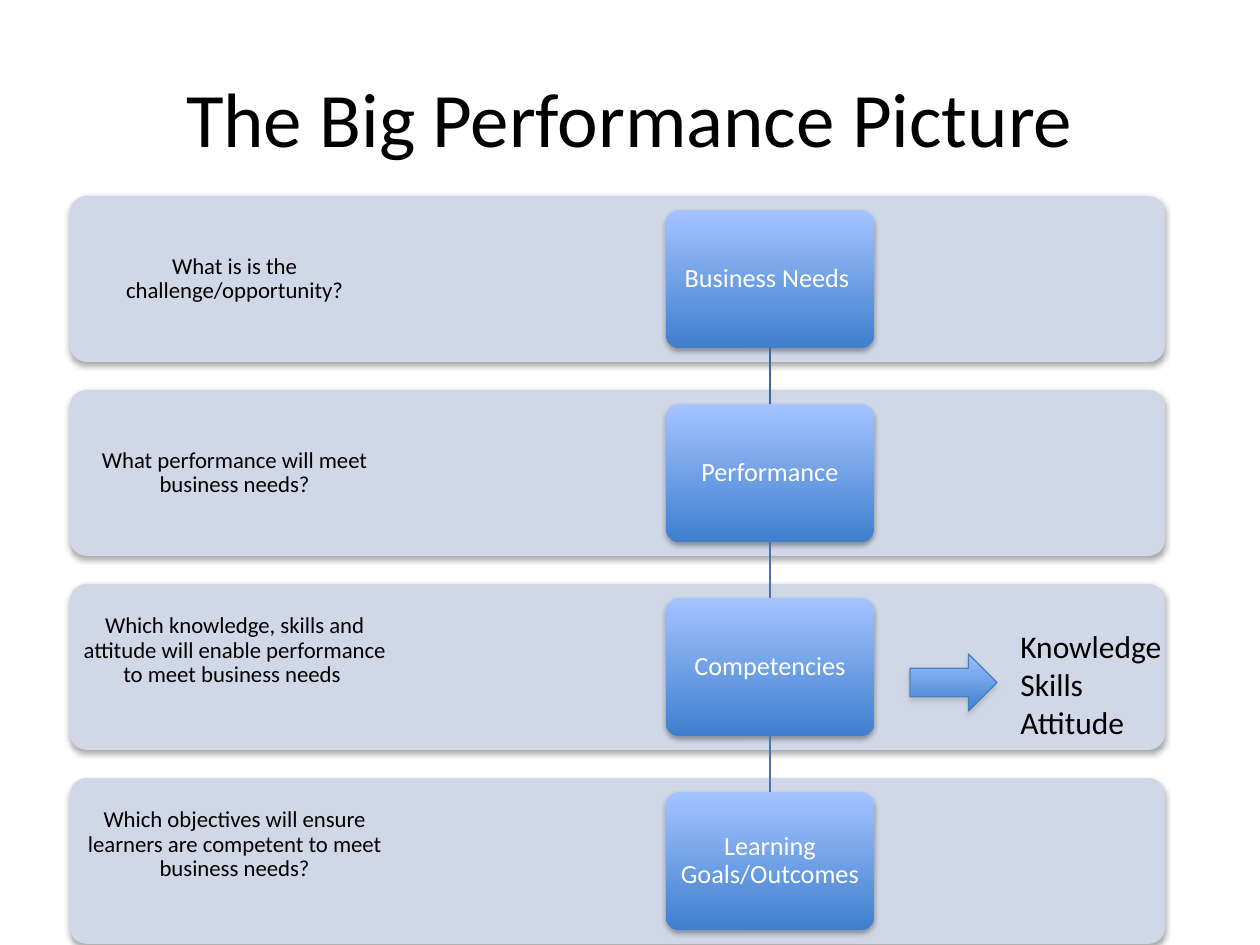
import pptx
import pptx.util
import pptx.dml.color
import pptx.enum.shapes
import pptx.enum.text
import pptx.oxml
import pptx.oxml.ns

TITLE = "The Big Performance Picture"
ROWS = [
    ("What is is the challenge/opportunity?", "Business Needs ", 13),
    ("What performance will meet business needs?", "Performance", 13),
    ("Which knowledge, skills and attitude will enable performance "
     "to meet business needs ", "Competencies", 45),
    ("Which objectives will ensure learners are competent to meet "
     "business needs?", "Learning Goals/Outcomes", 45),
]
LINKS = ["3F6797", "4875AC", "4875AC"]
TRAITS = ["Knowledge", "Skills", "Attitude"]

FONT = "Calibri"
SCALE = 914400 / 126
TOP, STEP = 196, 194
BAND_X, BAND_W, BAND_H = 70, 1095, 166
ASK_W = 329
BOX_X, BOX_W, BOX_H = 666, 208, 138
BOX_PAD = 4

KIND = pptx.enum.shapes.MSO_SHAPE
ALIGN = pptx.enum.text.PP_ALIGN
MIDDLE = pptx.enum.text.MSO_ANCHOR.MIDDLE


def px(n):
    return pptx.util.Emu(round(n * SCALE))


def tint(code):
    return pptx.dml.color.RGBColor.from_string(code)


def shade(shape, code):
    xml = (f'<a:effectLst {pptx.oxml.ns.nsdecls("a")}>'
           '<a:outerShdw blurRad="39370" dist="22860" dir="5400000" rotWithShape="0">'
           f'<a:srgbClr val="{code}"><a:alpha val="35000"/></a:srgbClr>'
           '</a:outerShdw></a:effectLst>')
    shape.shadow.inherit = False
    props = shape._element.spPr
    old = props.find(pptx.oxml.ns.qn("a:effectLst"))
    props.replace(old, pptx.oxml.parse_xml(xml))


def block(kind, spot, fills, line=None, glow="000000"):
    shape = slide.shapes.add_shape(kind, *map(px, spot))
    if len(fills) == 1:
        shape.fill.solid()
        shape.fill.fore_color.rgb = tint(fills[0])
    else:
        shape.fill.gradient()
        shape.fill.gradient_angle = 270
        for stop, code in zip(shape.fill.gradient_stops, fills):
            stop.color.rgb = tint(code)
    if line:
        shape.line.color.rgb = tint(line)
        shape.line.width = pptx.util.Pt(0.75)
    else:
        shape.line.fill.background()
    shade(shape, glow)
    return shape


def write(frame, lines, size, code, align=ALIGN.CENTER, lead=None):
    for i, text in enumerate(lines):
        para = frame.add_paragraph() if i else frame.paragraphs[0]
        para.alignment = align
        para.line_spacing = lead
        run = para.add_run()
        run.text = text
        run.font.name = FONT
        run.font.size = pptx.util.Pt(size)
        run.font.color.rgb = tint(code)


def inset(frame, pad, base):
    frame.word_wrap = True
    frame.vertical_anchor = MIDDLE
    frame.margin_left = frame.margin_right = frame.margin_top = px(pad)
    frame.margin_bottom = px(base)


deck = pptx.Presentation()
deck.slide_width, deck.slide_height = px(1260), px(945)
slide = deck.slides.add_slide(deck.slide_layouts[5])

title = slide.shapes.title
title.left, title.top, title.width, title.height = map(px, (63, 38, 1134, 157))
title.text_frame.vertical_anchor = MIDDLE
write(title.text_frame, [TITLE], 44, "000000")

boxes = []
for i, (ask, name, base) in enumerate(ROWS):
    top = TOP + i * STEP
    band = block(KIND.ROUNDED_RECTANGLE, (BAND_X, top, BAND_W, BAND_H), ["D0D8E8"])
    band.adjustments[0] = 0.1

    note = slide.shapes.add_textbox(*map(px, (BAND_X, top, ASK_W, BAND_H))).text_frame
    inset(note, 13, base)
    write(note, [ask], 13, "000000", lead=0.9)

    gap = (BAND_H - BOX_H) / 2
    box = block(KIND.ROUNDED_RECTANGLE, (BOX_X, top + gap, BOX_W, BOX_H),
                ["A4C4FF", "3F7FCE"])
    box.adjustments[0] = 0.1
    inset(box.text_frame, BOX_PAD, BOX_PAD)
    write(box.text_frame, [name], 15, "FFFFFF", lead=0.9)
    boxes.append(box)

for upper, lower, code in zip(boxes, boxes[1:], LINKS):
    link = slide.shapes.add_connector(pptx.enum.shapes.MSO_CONNECTOR.STRAIGHT, 0, 0, 0, 0)
    link.begin_connect(upper, 2)
    link.end_connect(lower, 0)
    link.line.color.rgb = tint(code)
    link.line.width = pptx.util.Pt(0.75)
    link._element.spPr.append(pptx.oxml.parse_xml(
        f'<a:effectLst {pptx.oxml.ns.nsdecls("a")}/>'))

traits = slide.shapes.add_textbox(*map(px, (1008, 621, 168, 127))).text_frame
traits.word_wrap = False
write(traits, TRAITS, 18, "000000", ALIGN.LEFT)

block(KIND.RIGHT_ARROW, (910, 654, 87, 57), ["9BC1FF", "3F80CD"], "4A7EBB", "808080")

deck.save("out.pptx")
